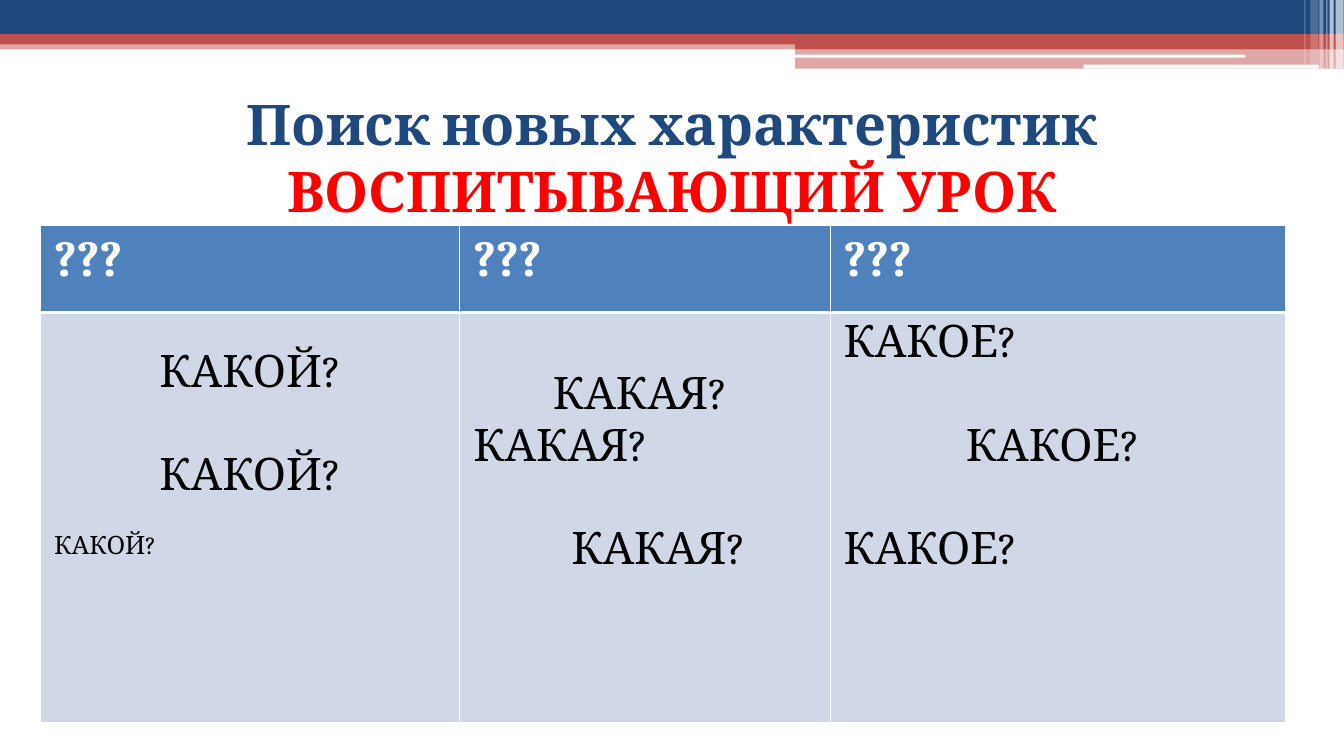
import pptx
import pptx.util
import pptx.oxml
import pptx.oxml.ns
from pptx.dml.color import RGBColor
from pptx.enum.shapes import MSO_SHAPE
from pptx.enum.text import MSO_ANCHOR, MSO_AUTO_SIZE, PP_ALIGN

Pt = pptx.util.Pt
COLORS = {
    "navy": "1F497D", "brick": "C0504D", "white": "FFFFFF", "red": "FF0000",
    "header": "4F81BD", "body": "D0D8E8", "black": "000000",
}
WIDTH, HEIGHT = 960, 540
BIG_GAP, SMALL_GAP = 37, 21  # one line at 32 pt, one line at 18 pt
CELL_TOP = 3.6

# left, top, width, height, colour, opacity in percent
BANDS = [
    (0, 28.8, WIDTH, 6.5, "brick", 50),
    (0, 0, WIDTH, 24.5, "navy", 100),
    (0, 24.5, WIDTH, 7.2, "brick", 100),
    (568, 28, 392, 7.2, "brick", 100),
    (568, 34.6, 392, 14.4, "brick", 50),
]
NOTCHES = [(567.5, 39, 322, 2.2), (774, 46.2, 168, 2.9)]
# left, width, height, opacity in percent
GLINTS = [
    (954, 5.8, 49, 65), (949.7, 2.9, 49, 65), (947.5, 0.72, 49, 60),
    (942.5, 2.9, 49, 40), (936, 5.8, 46, 20), (931.7, 0.72, 46, 30),
]

COLUMN_WIDTHS = (299.5, 264.5, 325)
ROW_HEIGHTS = (62, 293)
CENTER = {"align": PP_ALIGN.CENTER}
QUESTIONS = [
    [("КАКОЙ?", {**CENTER, "before": SMALL_GAP}),
     ("КАКОЙ?", {**CENTER, "before": BIG_GAP}),
     ("КАКОЙ?", {"size": 18, "before": SMALL_GAP})],
    [("КАКАЯ? ", {**CENTER, "before": BIG_GAP}),
     ("КАКАЯ?", {}),
     ("КАКАЯ?", {"before": BIG_GAP, "indent": 70})],
    [("КАКОЕ?", {}),
     ("КАКОЕ? ", {**CENTER, "before": BIG_GAP}),
     ("КАКОЕ?", {"before": BIG_GAP})],
]


def write(para, text, size=32, color="black", bold=False,
          align=PP_ALIGN.LEFT, before=0, indent=0):
    para.alignment = align
    para.space_before = Pt(before)
    if indent:
        properties = para._p.get_or_add_pPr()
        properties.set("marL", str(Pt(indent)))
        properties.set("indent", "0")
    span = para.add_run()
    span.text = text
    span.font.name = "Cambria"
    span.font.size = Pt(size)
    span.font.bold = bold
    span.font.color.rgb = RGBColor.from_string(COLORS[color])


class Painter:
    def __init__(self, deck):
        self.page = deck.slides.add_slide(deck.slide_layouts[5])

    def bar(self, left, top, width, height, color, opacity=100,
            kind=MSO_SHAPE.RECTANGLE):
        box = self.page.shapes.add_shape(
            kind, Pt(left), Pt(top), Pt(width), Pt(height))
        box.shadow.inherit = False
        box.line.fill.background()
        box.fill.solid()
        box.fill.fore_color.rgb = RGBColor.from_string(COLORS[color])
        if opacity < 100:
            tint = box._element.spPr.find(".//" + pptx.oxml.ns.qn("a:srgbClr"))
            alpha = pptx.oxml.parse_xml(
                f'<a:alpha {pptx.oxml.ns.nsdecls("a")} val="{opacity * 1000}"/>')
            tint.append(alpha)

    def title(self, left, top, width, height, parts):
        box = self.page.shapes.title
        box.left, box.top = Pt(left), Pt(top)
        box.width, box.height = Pt(width), Pt(height)
        frame = box.text_frame
        frame.word_wrap = True
        frame.auto_size = MSO_AUTO_SIZE.NONE
        frame.vertical_anchor = MSO_ANCHOR.MIDDLE
        for text, color in parts:
            write(frame.paragraphs[0], text, size=40, color=color, bold=True,
                  align=PP_ALIGN.CENTER)

    def table(self, left, top, widths, heights):
        frame = self.page.shapes.add_table(
            len(heights), len(widths), Pt(left), Pt(top),
            Pt(sum(widths)), Pt(sum(heights)))
        for column, width in zip(frame.table.columns, widths):
            column.width = Pt(width)
        for row, height in zip(frame.table.rows, heights):
            row.height = Pt(height)
        return frame.table

    def cell(self, cell, fill, lines, borders):
        """Fill one cell; borders maps a side (L, R, T, B) to its width."""
        cell.fill.solid()
        cell.fill.fore_color.rgb = RGBColor.from_string(COLORS[fill])
        cell.margin_left = cell.margin_right = Pt(9.6)
        cell.margin_bottom = Pt(CELL_TOP)
        # The gap above the first line belongs to the cell margin.
        cell.margin_top = Pt(CELL_TOP + lines[0][1].get("before", 0))
        for index, (text, style) in enumerate(lines):
            frame = cell.text_frame
            para = frame.add_paragraph() if index else frame.paragraphs[0]
            write(para, text, **(style if index else {**style, "before": 0}))
        properties = cell._tc.get_or_add_tcPr()
        for index, (side, width) in enumerate(borders.items()):
            properties.insert(index, pptx.oxml.parse_xml(
                f'<a:ln{side} {pptx.oxml.ns.nsdecls("a")} w="{Pt(width)}">'
                f'<a:solidFill><a:srgbClr val="{COLORS["white"]}"/></a:solidFill>'
                f'</a:ln{side}>'))


def main():
    deck = pptx.Presentation()
    deck.slide_width, deck.slide_height = Pt(WIDTH), Pt(HEIGHT)
    painter = Painter(deck)
    for band in BANDS:
        painter.bar(*band)
    for notch in NOTCHES:
        painter.bar(*notch, "white", kind=MSO_SHAPE.ROUNDED_RECTANGLE)
    for left, width, height, opacity in GLINTS:
        painter.bar(left, 0, width, height, "white", opacity)

    painter.title(48, 49, 864, 125.3, [
        ("Поиск новых характеристик ", "navy"), ("ВОСПИТЫВАЮЩИЙ УРОК", "red")])

    table = painter.table(29, 161.3, COLUMN_WIDTHS, ROW_HEIGHTS)
    heading = [("???", {"size": 36, "color": "white", "bold": True})]
    for column, lines in enumerate(QUESTIONS):
        painter.cell(table.cell(0, column), "header", heading,
                     {"L": 1, "R": 1, "T": 1, "B": 3})
        painter.cell(table.cell(1, column), "body", lines,
                     {"L": 1, "R": 1, "T": 3, "B": 1})
    deck.save("out.pptx")


if __name__ == "__main__":
    main()
